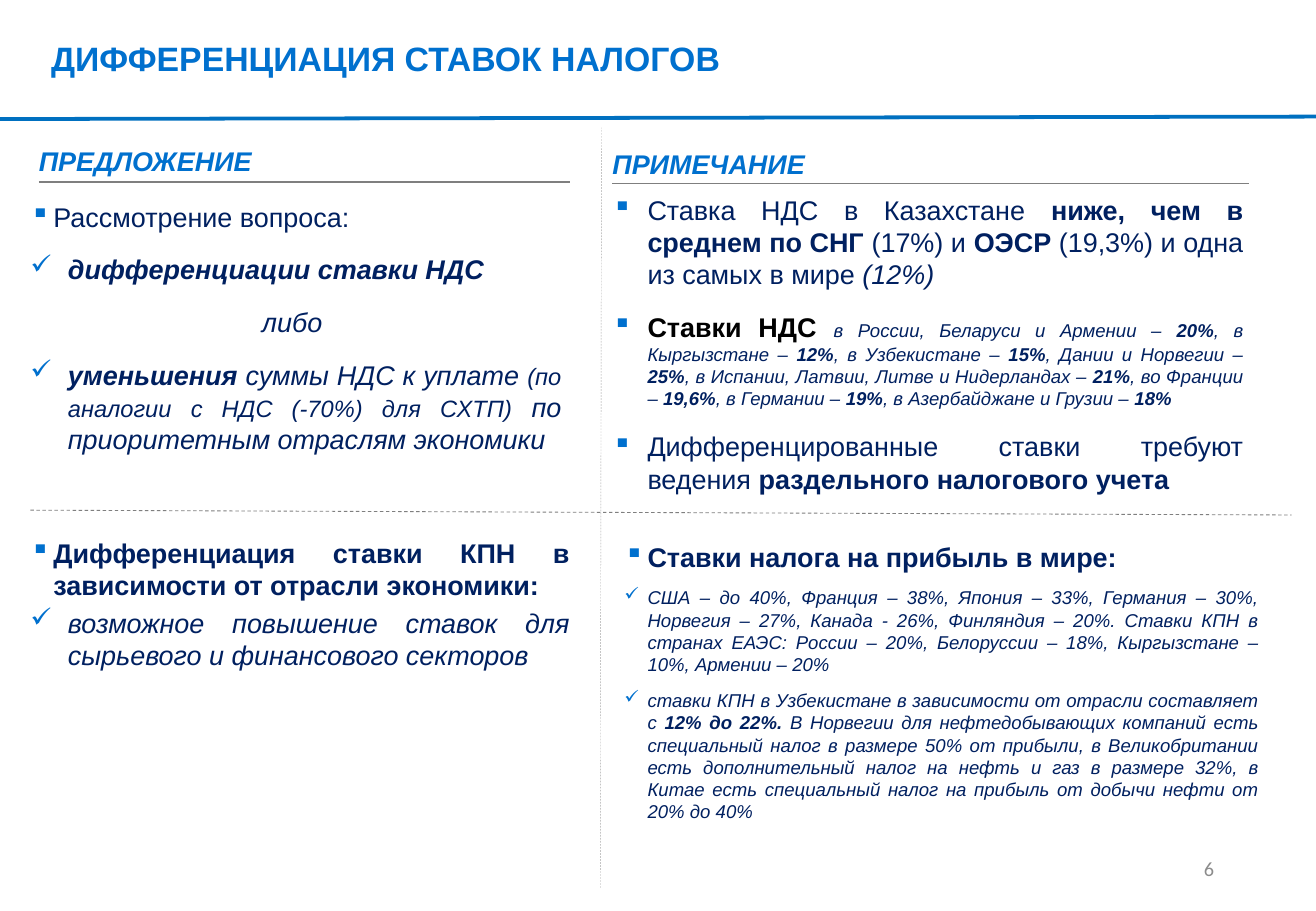
from lxml import etree
from pptx import Presentation, util as u
from pptx.dml.color import RGBColor
from pptx.enum import dml, shapes, text
from pptx.oxml.ns import qn

WIDTH, HEIGHT = 10.83, 7.5
LEFT, RIGHT, DIVIDER = 0.25, 5.04, 4.94
BLUE = RGBColor(0x00, 0x70, 0xCE)
RULE_BLUE = RGBColor(0x00, 0x70, 0xC0)
NAVY = RGBColor(0x00, 0x20, 0x60)
BLACK = RGBColor(0, 0, 0)
GRAY = RGBColor(0x7F, 0x7F, 0x7F)
PALE_GRAY = RGBColor(0xA6, 0xA6, 0xA6)
NUMBER_GRAY = RGBColor(0x8C, 0x8C, 0x8C)
SQUARE, CHECK = "▪", "✓"
JUSTIFY, CENTER = text.PP_ALIGN.JUSTIFY, text.PP_ALIGN.CENTER
TOP, MIDDLE, BOTTOM = (text.MSO_ANCHOR.TOP, text.MSO_ANCHOR.MIDDLE,
                       text.MSO_ANCHOR.BOTTOM)

deck = Presentation()
deck.slide_width, deck.slide_height = u.Inches(WIDTH), u.Inches(HEIGHT)
page = deck.slides.add_slide(deck.slide_layouts[6])


def add_frame(left, top, width, height, anchor=TOP, insets=(0, 0, 0, 0)):
    box = page.shapes.add_textbox(*map(u.Inches, (left, top, width, height)))
    frame = box.text_frame
    frame.word_wrap = True
    frame.vertical_anchor = anchor
    (frame.margin_left, frame.margin_top,
     frame.margin_right, frame.margin_bottom) = map(u.Inches, insets)
    return frame


def write(frame, *spans, bullet=None, indent=0, after=0, align=None,
          size=16, color=NAVY, italic=False, font="Arial"):
    """Add a paragraph; a span is text or (text, overrides), and * toggles bold."""
    first = frame.paragraphs[0]
    para = first if not first.runs else frame.add_paragraph()
    para.alignment = align
    para.space_after = u.Pt(after)
    if bullet:
        props = para._p.get_or_add_pPr()
        props.set("marL", str(u.Inches(indent)))
        props.set("indent", str(-u.Inches(indent)))
        tint = etree.SubElement(props, qn("a:buClr"))
        etree.SubElement(tint, qn("a:srgbClr"), val=str(BLUE))
        etree.SubElement(props, qn("a:buChar"), char=bullet)
    for span in spans:
        words, changes = span if isinstance(span, tuple) else (span, {})
        style = {"size": size, "color": color, "italic": italic} | changes
        for order, part in enumerate(words.split("*")):
            if part:
                run = para.add_run()
                run.text = part
                run.font.name = font
                run.font.size = u.Pt(style["size"])
                run.font.bold = order % 2 == 1
                run.font.italic = style["italic"]
                run.font.color.rgb = style["color"]


# Rules
for start, end, color, weight, dashed in (
    ((0, 0.98), (WIDTH, 0.96), RULE_BLUE, 2.25, False),
    ((0.32, 1.5), (4.69, 1.5), GRAY, 1, False),
    ((RIGHT, 1.51), (10.28, 1.51), GRAY, 1, False),
    ((DIVIDER, 7.31), (DIVIDER + 0.01, 1.05), PALE_GRAY, 0.25, True),
    ((LEFT, 4.2), (10.63, 4.24), GRAY, 0.5, True),
):
    rule = page.shapes.add_connector(
        shapes.MSO_CONNECTOR.STRAIGHT, *map(u.Inches, start + end))
    rule.line.color.rgb = color
    rule.line.width = u.Pt(weight)
    if dashed:
        rule.line.dash_style = dml.MSO_LINE.DASH
    etree.SubElement(rule._element.spPr, qn("a:effectLst"))

# Title, column headings and page number
title = add_frame(0.42, 0.14, 10.41, 0.68, MIDDLE)
write(title, "*ДИФФЕРЕНЦИАЦИЯ СТАВОК НАЛОГОВ*", size=20, color=BLUE)
for heading, left, bottom, width in (("ПРЕДЛОЖЕНИЕ", 0.32, 1.47, 4.39),
                                     ("ПРИМЕЧАНИЕ", RIGHT, 1.49, 5.25)):
    frame = add_frame(left, bottom - 0.28, width, 0.28, BOTTOM, (0, 0, 0, 0.01))
    write(frame, f"*{heading}*", color=BLUE, italic=True)
number = add_frame(7.65, 6.95, 2.44, 0.4, MIDDLE, (0.1, 0.05, 0.1, 0.05))
write(number, "6", size=12, color=NUMBER_GRAY, font="Calibri",
      align=text.PP_ALIGN.RIGHT)

# Paragraph formats
point = {"bullet": SQUARE, "indent": 0.19, "align": JUSTIFY}
option = {"bullet": CHECK, "indent": 0.31, "align": JUSTIFY, "italic": True}
note = point | {"indent": 0.29, "after": 12}
example = point | {"bullet": CHECK, "size": 11, "italic": True, "after": 8}
padding = (0.1, 0.05, 0.1, 0.05)

# VAT
vat = add_frame(LEFT, 1.65, 4.37, 2.53)
write(vat, "Рассмотрение вопроса:", after=12, **point)
write(vat, "*дифференциации ставки НДС*", after=12, **option)
write(vat, "либо ", after=12, align=CENTER, italic=True)
write(vat, "*уменьшения *суммы НДС к уплате ",
      ("(по аналогии с НДС (-70%) для СХТП) ", {"size": 14}),
      "по приоритетным отраслям экономики", after=12, **option)

vat_notes = add_frame(DIVIDER, 1.54, 5.39, 2.61, insets=padding)
write(vat_notes,
      "Ставка НДС в Казахстане *ниже, чем в среднем по СНГ* (17%) и *ОЭСР* "
      "(19,3%) и одна из самых в мире ", ("(12%)", {"italic": True}), **note)
write(vat_notes, ("*Ставки НДС *", {"color": BLACK}),
      ("в России, Беларуси и Армении – *20%*, в Кыргызстане – *12%*, "
       "в Узбекистане – *15%*, Дании и Норвегии – *25%*, в Испании, Латвии, "
       "Литве и Нидерландах – *21%*, во Франции – *19,6%*, в Германии – *19%*, "
       "в Азербайджане и Грузии – *18%*", {"size": 11, "italic": True}), **note)
write(vat_notes, "Дифференцированные ставки требуют ведения "
      "*раздельного налогового учета*", **note)

# Corporate income tax
profit = add_frame(LEFT, 4.41, 4.44, 1.12, MIDDLE)
write(profit, "*Дифференциация ставки КПН в зависимости от отрасли экономики:*",
      after=3, **point)
write(profit, "возможное повышение ставок для сырьевого и финансового секторов",
      after=3, **option)

profit_notes = add_frame(RIGHT, 4.4, 5.42, 2.45, insets=padding)
write(profit_notes, "*Ставки налога на прибыль в мире:*", after=8, **point)
write(profit_notes,
      "США – до 40%, Франция – 38%, Япония – 33%, Германия – 30%, "
      "Норвегия – 27%, Канада - 26%, Финляндия – 20%. Ставки КПН в странах "
      "ЕАЭС: России – 20%, Белоруссии – 18%, Кыргызстане – 10%, Армении – 20%",
      **example)
write(profit_notes,
      "ставки КПН в Узбекистане в зависимости от отрасли cоставляет с "
      "*12% до 22%. *В Норвегии для нефтедобывающих компаний есть специальный "
      "налог в размере 50% от прибыли, в Великобритании есть дополнительный "
      "налог на нефть и газ в размере 32%, в Китае есть специальный налог на "
      "прибыль от добычи нефти от 20% до 40%", **example)

deck.save("out.pptx")
